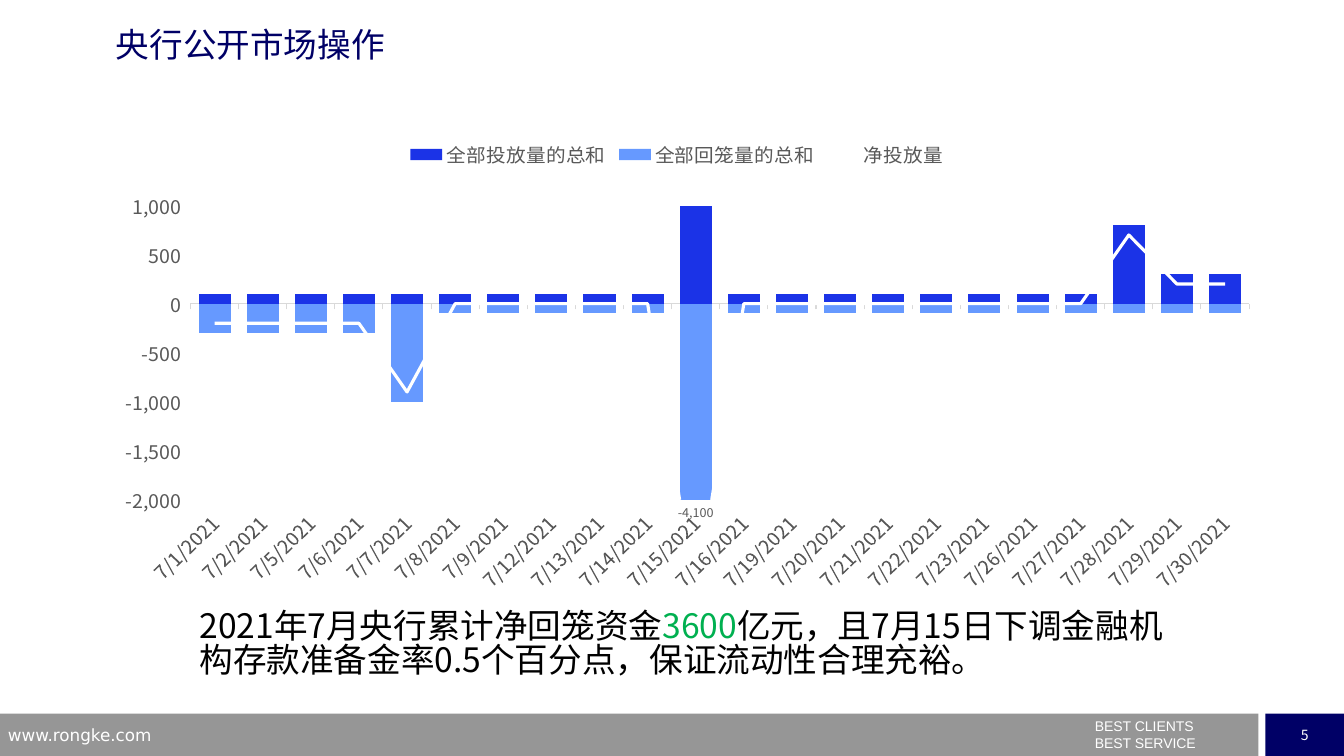
from dataclasses import dataclass

from lxml import etree
from pptx import Presentation
from pptx.chart.data import CategoryChartData
from pptx.dml.color import RGBColor
from pptx.enum.chart import (XL_CHART_TYPE, XL_LABEL_POSITION, XL_LEGEND_POSITION,
                             XL_MARKER_STYLE, XL_TICK_LABEL_POSITION, XL_TICK_MARK)
from pptx.enum.shapes import MSO_SHAPE
from pptx.enum.text import MSO_ANCHOR, PP_ALIGN
from pptx.oxml import parse_xml
from pptx.oxml.ns import nsdecls, qn
from pptx.util import Inches, Pt

RECT = MSO_SHAPE.RECTANGLE
COLUMN = XL_CHART_TYPE.COLUMN_CLUSTERED
TOP = XL_LEGEND_POSITION.TOP
LOW = XL_TICK_LABEL_POSITION.LOW
OUTSIDE = XL_TICK_MARK.OUTSIDE
NO_TICK = XL_TICK_MARK.NONE
NO_MARK = XL_MARKER_STYLE.NONE
OUT_END = XL_LABEL_POSITION.OUTSIDE_END
MIDDLE = MSO_ANCHOR.MIDDLE
CENTER = PP_ALIGN.CENTER


@dataclass
class Theme:
    font: str = "Noto Sans CJK SC"
    web: str = "DejaVu Sans"
    motto: str = "Arial"
    navy: str = "000066"
    grey: str = "969696"
    white: str = "FFFFFF"
    black: str = "000000"
    green: str = "00B050"
    label: str = "595959"
    axis: str = "D9D9D9"
    blue: str = "1B33E7"
    sky: str = "6699FF"
    head: int = 24
    key: int = 14
    link: int = 12
    small: int = 10
    tiny: int = 9


DAYS = [1, 2, *range(5, 10), *range(12, 17), *range(19, 24), *range(26, 31)]
# Daily flows in 100 million yuan; days not listed keep the usual 100.
PUT = {15: 1100, 28: 800, 29: 300, 30: 300}
TAKE = {1: 300, 2: 300, 5: 300, 6: 300, 7: 1000, 15: 4100}
USUAL = 100


def rgb(code):
    return RGBColor.from_string(code)


class Page:
    def __init__(self, deck, theme):
        self.theme = theme
        self.slide = deck.slides.add_slide(deck.slide_layouts[6])

    def style(self, font, size, color, face=None):
        face = face or self.theme.font
        font.size, font.name = Pt(size), face
        font.color.rgb = rgb(color)
        return face

    def fill(self, frame, lines, size, color, face=None, space=None):
        """Write lines, each a list of (text, colour or None) runs."""
        for i, line in enumerate(lines):
            para = frame.paragraphs[0] if i == 0 else frame.add_paragraph()
            if space:
                para.line_spacing = space
            for text, tint in line:
                run = para.add_run()
                run.text = text
                name = self.style(run.font, size, tint or color, face)
                east = etree.SubElement(run.font._element, qn("a:ea"))
                east.set("typeface", name)

    def bar(self, box, color):
        shape = self.slide.shapes.add_shape(RECT, *map(Inches, box))
        shape.shadow.inherit = False
        shape.fill.solid()
        shape.fill.fore_color.rgb = rgb(color)
        shape.line.fill.background()
        return shape

    def badge(self, box, color, text):
        frame = self.bar(box, color).text_frame
        self.fill(frame, [[(text, None)]], self.theme.small, self.theme.white)
        frame.word_wrap = False
        frame.vertical_anchor = MIDDLE
        frame.paragraphs[0].alignment = CENTER

    def text(self, box, lines, size, color, face=None, space=None, inset=True):
        frame = self.slide.shapes.add_textbox(*map(Inches, box)).text_frame
        frame.word_wrap = True
        if not inset:
            frame.margin_left = frame.margin_right = 0
            frame.margin_top = frame.margin_bottom = 0
        self.fill(frame, lines, size, color, face, space)

    def chart(self, box, names, cats, rows):
        """Draw two overlaid column series and a line for the last row."""
        look = self.theme
        data = CategoryChartData(number_format="#,##0")
        data.categories = cats
        for name, vals in zip(names, rows):
            data.add_series(name, vals)
        chart = self.slide.shapes.add_chart(COLUMN, *map(Inches, box), data).chart
        chart.has_title = False
        self.style(chart.font, look.small, look.black)
        chart.has_legend = True
        chart.legend.position = TOP
        chart.legend.include_in_layout = False
        self.style(chart.legend.font, look.key, look.label)
        self.axes(chart)
        self.split(chart)
        self.place(chart, 0.108, 0.171, 0.853, 0.666)

        cols, trend = chart.plots
        cols.gap_width, cols.overlap = 50, 100
        cols.vary_by_categories = False
        for series, color in zip(cols.series, (look.blue, look.sky)):
            series.invert_if_negative = False
            series.format.fill.solid()
            series.format.fill.fore_color.rgb = rgb(color)
        net = trend.series[0]
        net.smooth = False
        net.marker.style = NO_MARK
        net.format.line.color.rgb = rgb(look.white)
        net.format.line.width = Pt(2.25)

        tag = cols.series[1].points[DAYS.index(15)].data_label
        self.style(tag.font, look.tiny, look.label)
        tag.position = OUT_END

    def axes(self, chart):
        look = self.theme
        days, flow = chart.category_axis, chart.value_axis
        for axis in (days, flow):
            axis.has_major_gridlines = False
            axis.minor_tick_mark = NO_TICK
            self.style(axis.tick_labels.font, look.key, look.label)
        days.tick_label_position = LOW
        days.major_tick_mark = OUTSIDE
        days.format.line.color.rgb = rgb(look.axis)
        days.format.line.width = Pt(0.75)
        turn = days._element.find(qn("c:txPr")).find(qn("a:bodyPr"))
        turn.set("rot", "-2700000")
        flow.major_tick_mark = NO_TICK
        flow.format.line.fill.background()
        flow.minimum_scale, flow.maximum_scale = -2000, 1000
        flow.major_unit = 500
        flow.tick_labels.number_format = "#,##0_ "
        flow.tick_labels.number_format_is_linked = False

    def split(self, chart):
        """Move the last series into a line plot on the same axes."""
        bars = chart.plots[0]._element
        last = bars.findall(qn("c:ser"))[-1]
        for flag in last.findall(qn("c:invertIfNegative")):
            last.remove(flag)
        ids = "".join(f'<c:axId val="{a.get("val")}"/>'
                      for a in bars.findall(qn("c:axId")))
        line = parse_xml(f'<c:lineChart {nsdecls("c")}><c:grouping val="standard"/>'
                         f'<c:varyColors val="0"/><c:marker val="1"/>{ids}</c:lineChart>')
        line.insert(2, last)
        bars.addnext(line)

    def place(self, chart, *rect):
        """Fix the inner plot area as fractions of the chart."""
        area = chart._chartSpace.chart.plotArea
        for old in area.findall(qn("c:layout")):
            area.remove(old)
        spots = "".join(f'<c:{k} val="{v}"/>' for k, v in zip("xywh", rect))
        area.insert(0, parse_xml(
            f'<c:layout {nsdecls("c")}><c:manualLayout><c:layoutTarget val="inner"/>'
            f'<c:xMode val="edge"/><c:yMode val="edge"/>{spots}'
            f'</c:manualLayout></c:layout>'))


def main():
    deck = Presentation()
    deck.slide_width, deck.slide_height = Inches(13.33), Inches(7.5)
    look = Theme()
    page = Page(deck, look)

    page.bar((0, 7.08, 12.48, 0.42), look.grey)
    page.badge((12.55, 7.08, 0.78, 0.42), look.navy, "5")
    page.text((10.76, 7.07, 2, 0.42), [[("BEST CLIENTS", None)], [("BEST SERVICE", None)]],
              look.small, look.white, look.motto)
    page.text((-0.02, 7.14, 3.22, 0.26), [[("www.rongke.com", None)]],
              look.link, look.white, look.web)
    page.text((1.15, 0.28, 9, 0.57), [[("央行公开市场操作", None)]],
              look.head, look.navy, space=0.9, inset=False)

    put = [PUT.get(d, USUAL) for d in DAYS]
    take = [-TAKE.get(d, USUAL) for d in DAYS]
    net = [a + b for a, b in zip(put, take)]
    page.chart((0.56, 1.29, 12.31, 4.58),
               ("全部投放量的总和", "全部回笼量的总和", "净投放量"),
               [f"7/{d}/2021" for d in DAYS], (put, take, net))

    page.text((1.88, 6.01, 9.84, 0.91),
              [[("2021年7月央行累计净回笼资金", None), ("3600", look.green),
                ("亿元，且7月15日下调金融机构存款准备金率0.5个百分点，保证流动性合理充裕。", None)]],
              look.head, look.black, space=0.85)
    deck.save("out.pptx")


if __name__ == "__main__":
    main()
